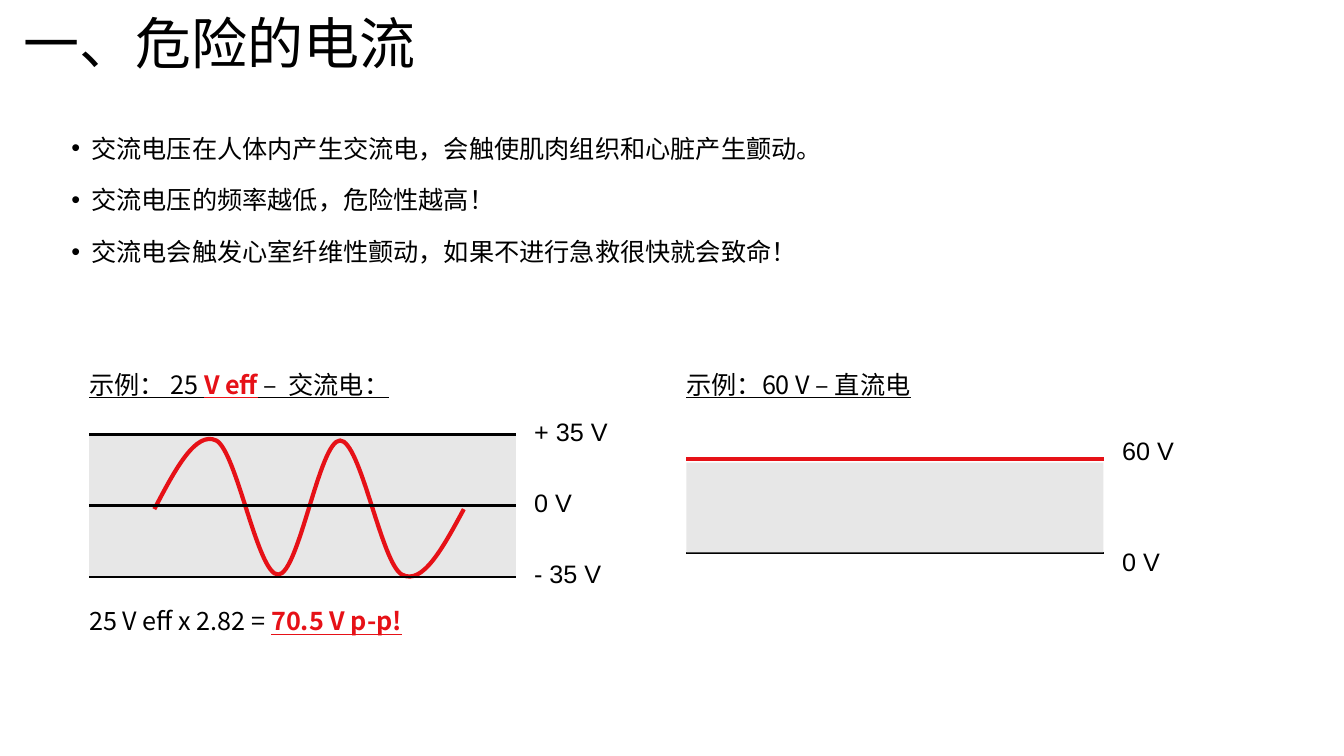
from lxml import etree
from pptx import Presentation
from pptx.dml.color import RGBColor
from pptx.enum.shapes import MSO_CONNECTOR, MSO_SHAPE
from pptx.enum.text import MSO_ANCHOR, MSO_AUTO_SIZE, PP_ALIGN
from pptx.oxml.ns import qn
from pptx.util import Cm, Pt

STRAIGHT = MSO_CONNECTOR.STRAIGHT
RECTANGLE = MSO_SHAPE.RECTANGLE
BOTTOM = MSO_ANCHOR.BOTTOM
CENTER = PP_ALIGN.CENTER
GROW = MSO_AUTO_SIZE.SHAPE_TO_FIT_TEXT
LEFT_SIDE, RIGHT_SIDE = 1, 3

CJK, LATIN = "Noto Sans CJK SC", "Arial"
BLACK, RED, GREY = "000000", "E61117", "E7E7E7"
rgb = RGBColor.from_string

AC_LEFT, AC_RIGHT, AC_TOP = 2.25, 13, 10.95
AC_STEP = 1.79
AC_LEVELS = [AC_TOP + step * AC_STEP for step in range(3)]
AC_VOLTAGES = ["+ 35 V", "0 V", "- 35 V"]
DC_LEFT, DC_RIGHT = 17.3, 27.81
DC_60V, DC_0V = 11.56, 13.94
DC_BAND_TOP, DC_BAND_HEIGHT = 11.66, 2.26

WAVE_LEFT, WAVE_STEP = 3.89, 0.52
WAVE_HEIGHTS = [12.83,
                11.84, 10.85, 11.1,
                11.38, 14.48, 14.48,
                14.48, 11.1, 11.1,
                11.1, 14.2, 14.48,
                14.76, 13.79, 12.83]

HEADING_TOP, FORMULA_TOP = 9.17, 15.14
AC_LABEL_LEFT, DC_LABEL_LEFT = 13.46, 28.28
LABEL_RISE = 0.59
LABEL_WIDTH, CAPTION_WIDTH = 2.69, 12.27


def format_run(run, font, size=18, color=BLACK, bold=False, underline=False):
    run.font.name = font
    run.font.size = Pt(size)
    run.font.bold = bold
    run.font.underline = underline
    run.font.color.rgb = rgb(color)
    etree.SubElement(run.font._element, qn("a:ea"), typeface=font)


def add_level(left, right, y, color=BLACK, width=1.5):
    level = slide.shapes.add_connector(STRAIGHT, Cm(left), Cm(y), Cm(right), Cm(y))
    level.line.color.rgb = rgb(color)
    level.line.width = Pt(width)
    etree.SubElement(level._element.spPr, qn("a:effectLst"))
    return level


prs = Presentation()
prs.slide_width, prs.slide_height = Cm(33.87), Cm(19.05)
TITLE_ONLY = prs.slide_layouts[5]
slide = prs.slides.add_slide(TITLE_ONLY)

title = slide.shapes.title
title.left, title.top, title.width, title.height = Cm(0), Cm(0), Cm(11.07), Cm(2.06)
title.text_frame.text = "一、危险的电流"
title.text_frame.vertical_anchor = BOTTOM
heading = title.text_frame.paragraphs[0]
heading.alignment = CENTER
heading.line_spacing = 0.9
format_run(heading.runs[0], CJK, size=40)

facts = slide.shapes.add_textbox(Cm(1.8), Cm(3.23), Cm(28.8), Cm(3.53)).text_frame
facts.word_wrap = True
facts.auto_size = GROW
facts.margin_left = facts.margin_right = facts.margin_top = facts.margin_bottom = 0
facts.text = "\n".join([
    "交流电压在人体内产生交流电，会触使肌肉组织和心脏产生颤动。",
    "交流电压的频率越低，危险性越高！",
    "交流电会触发心室纤维性颤动，如果不进行急救很快就会致命！",
])
for fact in facts.paragraphs:
    fact.line_spacing = Pt(25)
    fact.space_before = Pt(12)
    format_run(fact.runs[0], CJK)
    bullet = fact._p.get_or_add_pPr()
    bullet.set("marL", str(Cm(0.5)))
    bullet.set("indent", str(-Cm(0.5)))
    etree.SubElement(bullet, qn("a:buFont"), typeface=LATIN)
    etree.SubElement(bullet, qn("a:buChar"), char="•")

add_level(DC_LEFT, DC_RIGHT, DC_0V)
add_level(DC_LEFT, DC_RIGHT, DC_60V, RED, 3)

bands = []
for left, right, top, height in [
    (AC_LEFT, AC_RIGHT, AC_TOP, 2 * AC_STEP),
    (DC_LEFT, DC_RIGHT, DC_BAND_TOP, DC_BAND_HEIGHT),
]:
    band = slide.shapes.add_shape(RECTANGLE, Cm(left), Cm(top), Cm(right - left), Cm(height))
    band.shadow.inherit = False
    band.fill.solid()
    band.fill.fore_color.rgb = rgb(GREY)
    band.line.fill.background()
    bands.append(band)
ac_band, dc_band = bands

wave_points = [(Cm(WAVE_LEFT + i * WAVE_STEP), Cm(y)) for i, y in enumerate(WAVE_HEIGHTS)]
wave_builder = slide.shapes.build_freeform(*wave_points[0])
wave_builder.add_line_segments(wave_points[1:], close=False)
wave = wave_builder.convert_to_shape()
wave.shadow.inherit = False
wave.fill.background()
wave.line.color.rgb = rgb(RED)
wave.line.width = Pt(3)

segments = list(wave._element.iter(qn("a:lnTo")))
outline = segments[0].getparent()
for start in range(0, len(segments), 3):
    curve = etree.SubElement(outline, qn("a:cubicBezTo"))
    for segment in segments[start:start + 3]:
        curve.append(segment[0])
        outline.remove(segment)

ac_lines = [add_level(AC_LEFT, AC_RIGHT, y) for y in AC_LEVELS]
zero_line = ac_lines[1]
zero_line.begin_connect(ac_band, LEFT_SIDE)
zero_line.end_connect(ac_band, RIGHT_SIDE)

plain = {}
underlined = {"underline": True}
strong = {"color": RED, "bold": True, "underline": True}
captions = [
    (AC_LEFT, HEADING_TOP, CAPTION_WIDTH, CJK,
     [("示例： 25 ", underlined), ("V eff", strong), (" –  交流电：", underlined)]),
    (DC_LEFT, HEADING_TOP, CAPTION_WIDTH, CJK, [("示例：60 V – 直流电", underlined)]),
    (AC_LEFT, FORMULA_TOP, CAPTION_WIDTH, CJK,
     [("25 V eff x 2.82 = ", plain), ("70.5 V p-p!", strong)]),
    (DC_LABEL_LEFT, 10.85, LABEL_WIDTH, LATIN, [("60 V", plain)]),
    (DC_LABEL_LEFT, 13.64, LABEL_WIDTH, LATIN, [("0 V", plain)]),
]
for y, voltage in zip(AC_LEVELS, AC_VOLTAGES):
    captions.append((AC_LABEL_LEFT, y - LABEL_RISE, LABEL_WIDTH, LATIN, [(voltage, plain)]))

for left, top, width, font, pieces in captions:
    caption = slide.shapes.add_textbox(Cm(left), Cm(top), Cm(width), Cm(1.22)).text_frame
    caption.word_wrap = True
    caption.auto_size = GROW
    caption.margin_left = 0
    for wording, style in pieces:
        run = caption.paragraphs[0].add_run()
        run.text = wording
        format_run(run, font, **style)

prs.save("out.pptx")
